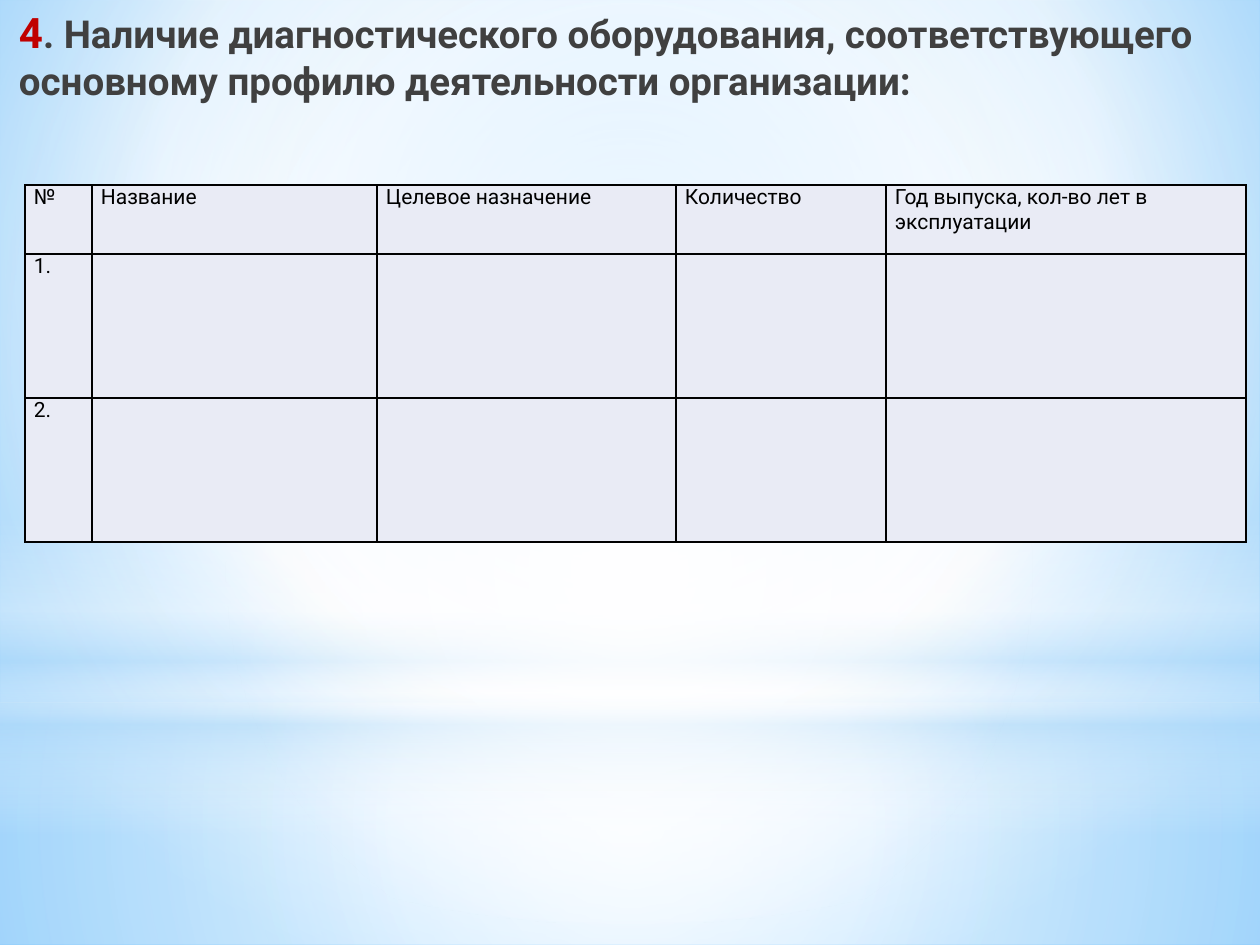
import dataclasses

import pptx
import pptx.dml.color
import pptx.enum.shapes
import pptx.enum.text
import pptx.oxml
import pptx.oxml.ns
import pptx.util

SCALE = 914400 / 126
W, H = 1260, 945
SHAPE = pptx.enum.shapes.MSO_SHAPE
ALIGN = pptx.enum.text.PP_ALIGN
qn = pptx.oxml.ns.qn


@dataclasses.dataclass(frozen=True)
class Theme:
    font: str = "Roboto"
    number: str = "C00000"
    title: str = "404040"
    ink: str = "000000"
    cell: str = "E9EBF5"
    white: str = "FFFFFF"
    haze: str = "B4DCFA"
    sky: str = "9ED5FF"
    deep: str = "5BB9FF"
    number_size: int = 24
    title_size: int = 22
    cell_size: int = 12
    border: int = 1


T = Theme()
CENTER = (50, 50, 50, 50)
HEADERS = ["№", "Название", "Целевое назначение", "Количество",
           "Год выпуска, кол-во лет в эксплуатации"]
ROWS = [HEADERS, ["1."], ["2."]]
COLUMN_WIDTHS = [67, 285, 299, 210, 360]
ROW_HEIGHTS = [69, 144, 144]


def px(n):
    return pptx.util.Emu(round(n * SCALE))


def rgb(color):
    return pptx.dml.color.RGBColor.from_string(color)


def style(font, size, color, bold=False):
    font.name = T.font
    font.size = pptx.util.Pt(size)
    font.color.rgb = rgb(color)
    font.bold = bold


def xml(markup):
    return pptx.oxml.parse_xml(markup.replace(">", f" {pptx.oxml.ns.nsdecls('a')}>", 1))


def set_gradient(fill, element, stops, focus=None):
    fill.gradient()
    grad = element.find(".//" + qn("a:gradFill"))
    for child in list(grad):
        grad.remove(child)
    marks = "".join(
        f'<a:gs pos="{pos * 1000}"><a:srgbClr val="{color}">'
        f'<a:alpha val="{alpha * 1000}"/></a:srgbClr></a:gs>'
        for pos, color, alpha in stops)
    grad.append(xml(f"<a:gsLst>{marks}</a:gsLst>"))
    if focus:
        sides = " ".join(f'{side}="{n * 1000}"' for side, n in zip("ltrb", focus))
        grad.append(xml(f'<a:path path="circle"><a:fillToRect {sides}/></a:path>'))
    else:
        grad.append(xml('<a:lin ang="5400000" scaled="0"></a:lin>'))


def add_glow(s, kind, x, y, w, h, stops, focus=None):
    sp = s.shapes.add_shape(kind, px(x), px(y), px(w), px(h))
    sp.shadow.inherit = False
    sp.line.fill.background()
    set_gradient(sp.fill, sp.element, stops, focus)


def add_backdrop(s, x, y, w, h):
    set_gradient(s.background.fill, s.element,
                 [(0, T.sky, 100), (60, T.white, 100), (100, T.deep, 100)],
                 (20, 10, 20, 60))
    horizon = 703
    add_glow(s, SHAPE.RECTANGLE, x, y + horizon, w, h - horizon,
             [(0, T.white, 91), (37, T.white, 76), (100, T.haze, 79)], CENTER)
    add_glow(s, SHAPE.RECTANGLE, x, y, w, horizon,
             [(0, T.white, 89), (48, T.white, 62), (100, T.haze, 79)], CENTER)
    add_glow(s, SHAPE.RECTANGLE, x, y + 519, w, 315,
             [(0, T.white, 0), (29, T.white, 30), (45, T.haze, 40),
              (55, T.white, 26), (65, T.haze, 60), (100, T.white, 0)])
    add_glow(s, SHAPE.OVAL, x, y + 221, w, horizon,
             [(0, T.white, 100), (56, T.white, 0)], CENTER)


def add_heading(s, x, y, w, h):
    tf = s.shapes.add_textbox(px(x), px(y), px(w), px(h)).text_frame
    tf.word_wrap = True
    tf.margin_left = px(19)
    p = tf.paragraphs[0]
    p.space_before = pptx.util.Pt(5)
    p.space_after = pptx.util.Pt(3)
    for text, size, color in [
        ("4", T.number_size, T.number),
        (". Наличие диагностического оборудования, соответствующего "
         "основному профилю деятельности организации:", T.title_size, T.title),
    ]:
        r = p.add_run()
        r.text = text
        style(r.font, size, color, bold=True)


def add_borders(cell):
    tc_pr = cell._tc.get_or_add_tcPr()
    for i, side in enumerate("LRTB"):
        tc_pr.insert(i, xml(
            f'<a:ln{side} w="{pptx.util.Pt(T.border)}"><a:solidFill>'
            f'<a:srgbClr val="{T.ink}"/></a:solidFill></a:ln{side}>'))


def add_equipment_table(s, x, y):
    table = s.shapes.add_table(
        len(ROW_HEIGHTS), len(COLUMN_WIDTHS), px(x), px(y),
        px(sum(COLUMN_WIDTHS)), px(sum(ROW_HEIGHTS))).table
    table.first_row = table.horz_banding = False
    for column, width in zip(table.columns, COLUMN_WIDTHS):
        column.width = px(width)
    for row, height, texts in zip(table.rows, ROW_HEIGHTS, ROWS):
        row.height = px(height)
        for i, cell in enumerate(row.cells):
            cell.fill.solid()
            cell.fill.fore_color.rgb = rgb(T.cell)
            cell.margin_left = cell.margin_right = px(9)
            cell.margin_top = cell.margin_bottom = 0
            add_borders(cell)
            if i < len(texts):
                cell.text = texts[i]
                p = cell.text_frame.paragraphs[0]
                p.alignment = ALIGN.LEFT if i == len(HEADERS) - 1 else ALIGN.JUSTIFY
                style(p.font, T.cell_size, T.ink)


def main():
    prs = pptx.Presentation()
    prs.slide_width, prs.slide_height = px(W), px(H)
    s = prs.slides.add_slide(prs.slide_layouts[6])
    add_backdrop(s, 0, 0, W, H)
    add_heading(s, 0, 0, 1245, 711)
    add_equipment_table(s, 25, 185)
    prs.save("out.pptx")


if __name__ == "__main__":
    main()
